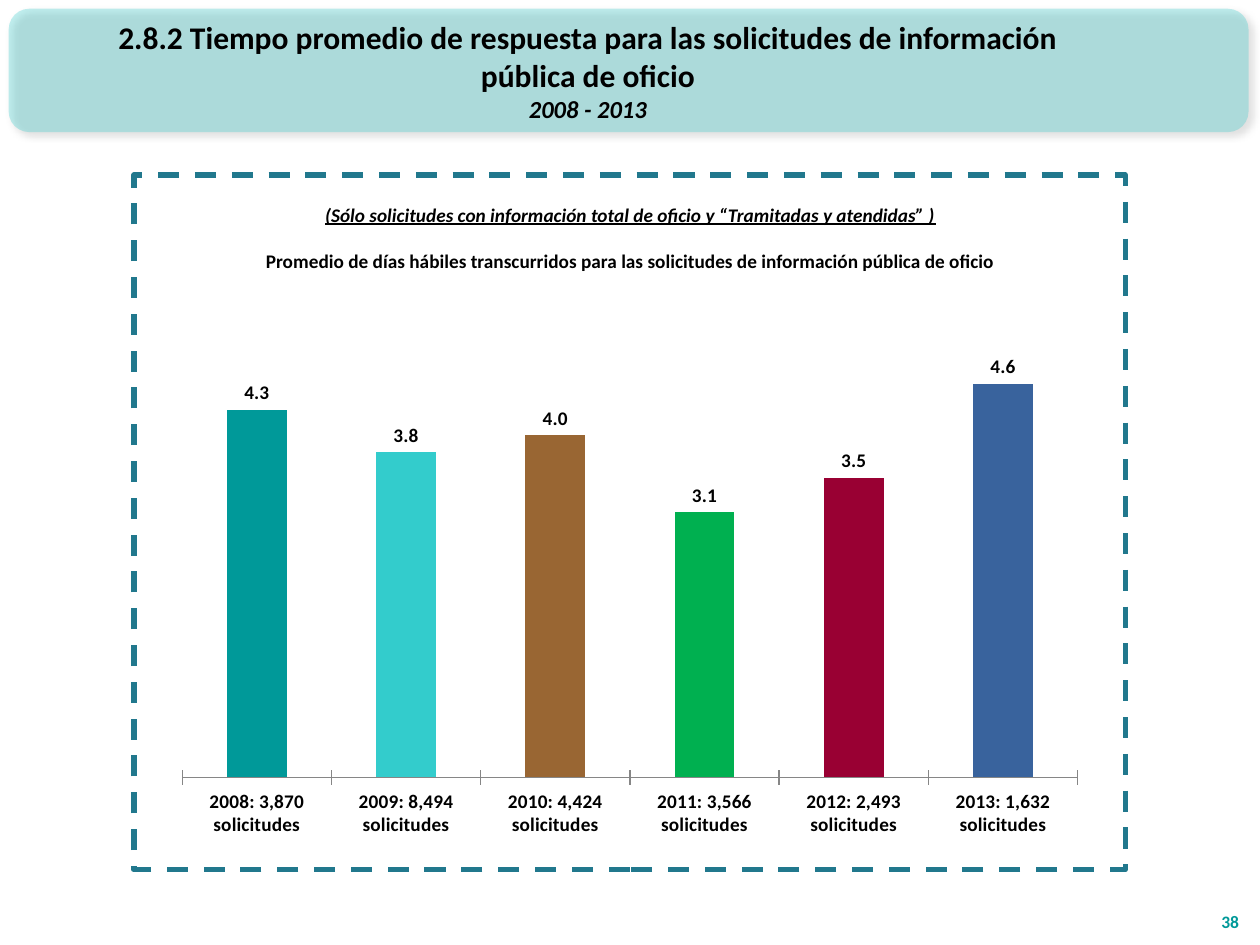
"""Build the slide on average response time for public information requests."""
from lxml import etree
from pptx import Presentation
from pptx.chart.data import CategoryChartData
from pptx.dml.color import RGBColor
from pptx.enum.chart import XL_CHART_TYPE, XL_LABEL_POSITION, XL_TICK_MARK
from pptx.enum.dml import MSO_LINE
from pptx.enum.shapes import MSO_SHAPE
from pptx.enum.text import MSO_ANCHOR, MSO_AUTO_SIZE, PP_ALIGN
from pptx.oxml import parse_xml
from pptx.oxml.ns import qn
from pptx.util import Pt

CENTER, RIGHT = PP_ALIGN.CENTER, PP_ALIGN.RIGHT
MIDDLE, BOTTOM = MSO_ANCHOR.MIDDLE, MSO_ANCHOR.BOTTOM
COLUMNS = XL_CHART_TYPE.COLUMN_CLUSTERED
CROSS = XL_TICK_MARK.CROSS
OUTSIDE_END = XL_LABEL_POSITION.OUTSIDE_END

FONT = "Calibri"
COLORS = {
    "banner": "33CCCC", "text": "000000", "number": "009999",
    "frame": "21788D", "axis": "868686",
}
YEARS = [
    ("2008: 3,870 solicitudes", 4.3, "009999"),
    ("2009: 8,494 solicitudes", 3.8, "33CCCC"),
    ("2010: 4,424 solicitudes", 4.0, "996633"),
    ("2011: 3,566 solicitudes", 3.1, "00B050"),
    ("2012: 2,493 solicitudes", 3.5, "990033"),
    ("2013: 1,632 solicitudes", 4.6, "39639D"),
]
PLOT_AREA = {"x": 0.02, "y": 0.03, "w": 0.96, "h": 0.83}


def style_font(font, size, color="text", italic=False, underline=False):
    font.name, font.size, font.bold = FONT, Pt(size), True
    font.italic, font.underline = italic, underline
    font.color.rgb = RGBColor.from_string(COLORS[color])


def add_lines(frame, lines, align):
    frame.word_wrap = True
    frame.text = "\n".join(text for text, _ in lines)
    for paragraph, (_, style) in zip(frame.paragraphs, lines):
        paragraph.alignment = align
        style_font(paragraph.font, **style)


prs = Presentation()
prs.slide_width, prs.slide_height = Pt(720), Pt(540)
slide = prs.slides.add_slide(prs.slide_layouts[5])
shapes = slide.shapes

banner = shapes.add_shape(MSO_SHAPE.ROUNDED_RECTANGLE, Pt(5), Pt(5), Pt(708.5), Pt(70.5))
banner.fill.solid()
banner.fill.fore_color.rgb = RGBColor.from_string(COLORS["banner"])
banner.line.fill.background()
banner.shadow.inherit = False
banner_color = banner._element.spPr.find(qn("a:solidFill"))[0]
etree.SubElement(banner_color, qn("a:alpha"), val="30000")
effects = banner._element.spPr.find(qn("a:effectLst"))
shadow = etree.SubElement(
    effects, qn("a:outerShdw"), blurRad=str(Pt(4)), dist=str(Pt(3)),
    dir="2700000", algn="tl", rotWithShape="0")
shadow_color = etree.SubElement(shadow, qn("a:srgbClr"), val="000000")
etree.SubElement(shadow_color, qn("a:alpha"), val="40000")

title = shapes.title
title.left, title.top, title.width, title.height = Pt(6), Pt(6.5), Pt(660), Pt(67.5)
title.text_frame.auto_size = MSO_AUTO_SIZE.NONE
title.text_frame.vertical_anchor = MIDDLE
add_lines(title.text_frame, [
    ("2.8.2 Tiempo promedio de respuesta para las solicitudes de información", {"size": 18}),
    ("pública de oficio", {"size": 18}),
    ("2008 - 2013", {"size": 14, "italic": True}),
], CENTER)
shapes._spTree.append(title._element)

page_number = shapes.add_textbox(Pt(680), Pt(507), Pt(35), Pt(29)).text_frame
page_number.vertical_anchor = BOTTOM
add_lines(page_number, [("38", {"size": 10, "color": "number"})], RIGHT)

subtitle = shapes.add_textbox(Pt(111.5), Pt(112.5), Pt(497.5), Pt(47.5)).text_frame
add_lines(subtitle, [
    ("(Sólo solicitudes con información total de oficio y “Tramitadas y atendidas” )",
     {"size": 11, "italic": True, "underline": True}),
    ("Promedio de días hábiles transcurridos para las solicitudes de información pública de oficio",
     {"size": 11}),
], CENTER)
subtitle.paragraphs[1].space_before = Pt(13)

averages = CategoryChartData(number_format="0.0")
averages.categories = [category for category, _, _ in YEARS]
averages.add_series("Promedio de días hábiles", [days for _, days, _ in YEARS])
chart = shapes.add_chart(COLUMNS, Pt(93.5), Pt(191), Pt(533), Pt(294.5), averages).chart
chart.has_title = chart.has_legend = False
style_font(chart.font, 11)

year_axis = chart.category_axis
year_axis.major_tick_mark = CROSS
year_axis.format.line.color.rgb = RGBColor.from_string(COLORS["axis"])
days_axis = chart.value_axis
days_axis.minimum_scale, days_axis.maximum_scale, days_axis.major_unit = 0, 5, 2.5
days_axis.has_major_gridlines = False
days_axis.visible = False

plot = chart.plots[0]
plot.gap_width = 150
plot.vary_by_categories = False
plot.has_data_labels = True
labels = plot.data_labels
labels.show_value = True
labels.number_format, labels.number_format_is_linked = "0.0", False
labels.position = OUTSIDE_END
style_font(labels.font, 11)
for index, (_, _, color) in enumerate(YEARS):
    column_fill = plot.series[0].points[index].format.fill
    column_fill.solid()
    column_fill.fore_color.rgb = RGBColor.from_string(color)

layout = parse_xml(
    '<c:layout xmlns:c="http://schemas.openxmlformats.org/drawingml/2006/chart">'
    '<c:manualLayout><c:layoutTarget val="inner"/>'
    '<c:xMode val="edge"/><c:yMode val="edge"/>'
    + "".join(f'<c:{key} val="{share}"/>' for key, share in PLOT_AREA.items())
    + "</c:manualLayout></c:layout>")
plot_area = chart._chartSpace.chart.plotArea
for default_layout in plot_area.findall(qn("c:layout")):
    plot_area.remove(default_layout)
plot_area.insert(0, layout)

frame = shapes.add_shape(MSO_SHAPE.RECTANGLE, Pt(76.5), Pt(100), Pt(566.5), Pt(397))
frame.fill.background()
frame.shadow.inherit = False
frame.line.color.rgb = RGBColor.from_string(COLORS["frame"])
frame.line.width = Pt(3)
frame.line.dash_style = MSO_LINE.DASH

prs.save("out.pptx")
